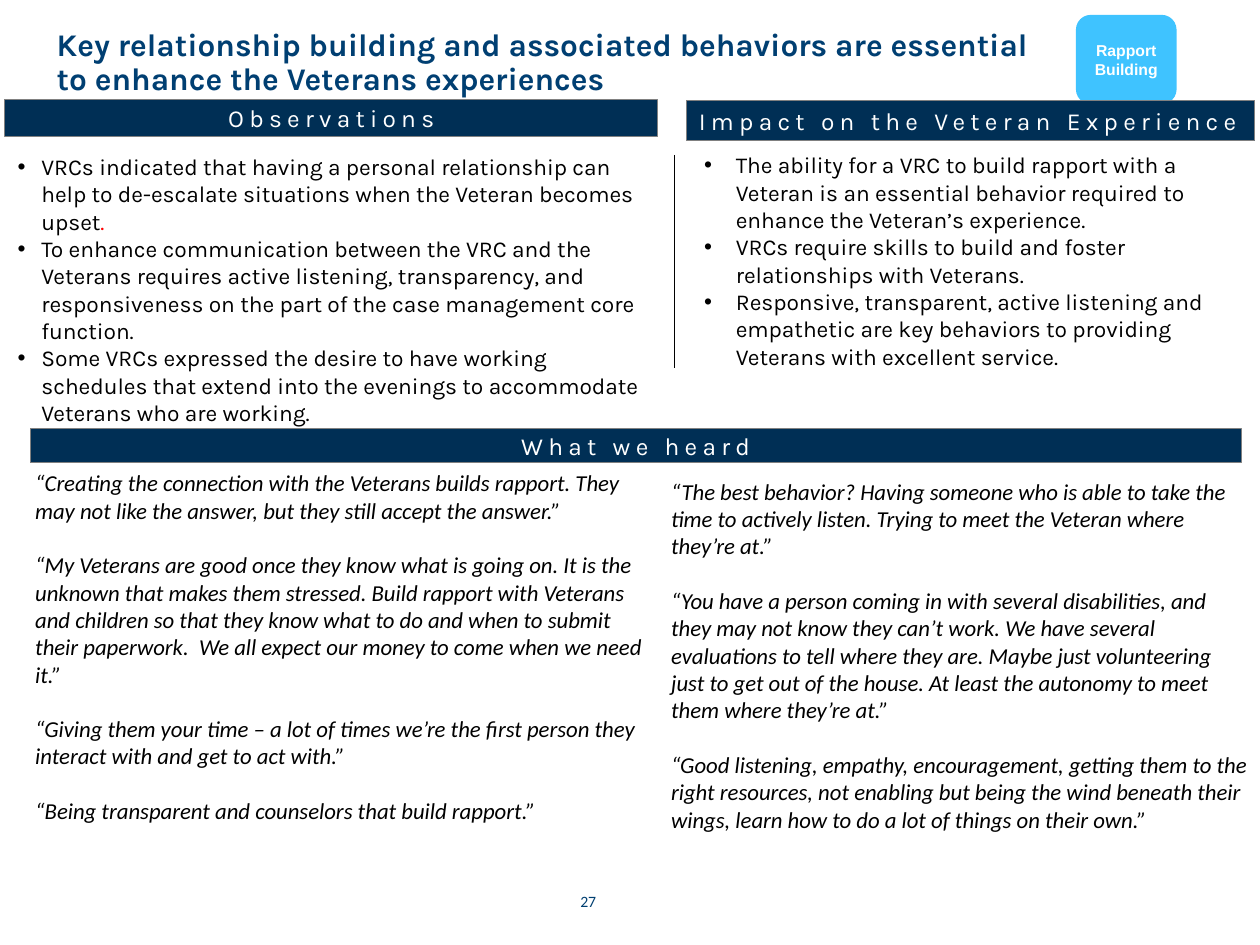
from collections import namedtuple
from dataclasses import dataclass

from lxml.etree import SubElement
from pptx import Presentation
from pptx.dml.color import RGBColor
from pptx.enum.shapes import MSO_CONNECTOR, MSO_SHAPE
from pptx.enum.text import MSO_ANCHOR as Anchor, MSO_AUTO_SIZE, PP_ALIGN as Align
from pptx.oxml.ns import qn
from pptx.util import Cm, Pt

Box = namedtuple("Box", "left top width height")


@dataclass(frozen=True)
class Theme:
    """Colours, fonts and type sizes of the slide."""
    navy: str = "002F55"
    title: str = "003F72"
    number: str = "003F71"
    sky: str = "3FC3FF"
    grey: str = "808080"
    black: str = "000000"
    white: str = "FFFFFF"
    red: str = "FF0000"
    heading_font: str = "Karla"
    quote_font: str = "Calibri"
    badge_font: str = "Arial"
    title_size: float = 18
    band_size: float = 14
    body_size: float = 13
    small_size: float = 9
    quote_gap: float = 15.6


THEME = Theme()

TITLE = ("Key relationship building and associated behaviors are essential "
         "to enhance the Veterans experiences")
OBSERVATIONS = [
    [("VRCs indicated that having a personal relationship can help to de-escalate "
      "situations when the Veteran becomes upset", THEME.black), (".", THEME.red)],
    [("To enhance communication between the VRC and the Veterans requires active "
      "listening, transparency, and responsiveness on the part of the case management "
      "core function.", THEME.black)],
    [("Some VRCs expressed the desire to have working schedules that extend into the "
      "evenings to accommodate Veterans who are working.", THEME.black)],
]
IMPACTS = [
    [("The ability for a VRC to build rapport with a Veteran is an essential behavior "
      "required to enhance the Veteran’s experience.", THEME.black)],
    [("VRCs require skills to build and foster relationships with Veterans.", THEME.black)],
    [("Responsive, transparent, active listening and empathetic are key behaviors to "
      "providing Veterans with excellent service.", THEME.black)],
]
LEFT_QUOTES = [
    "“Creating the connection with the Veterans builds rapport. They may not like the "
    "answer, but they still accept the answer.”",
    "“My Veterans are good once they know what is going on. It is the unknown that makes "
    "them stressed. Build rapport with Veterans and children so that they know what to do "
    "and when to submit their paperwork.  We all expect our money to come when we need it.”",
    "“Giving them your time – a lot of times we’re the first person they interact with "
    "and get to act with.”",
    "“Being transparent and counselors that build rapport.”",
]
RIGHT_QUOTES = [
    "“The best behavior? Having someone who is able to take the time to actively listen. "
    "Trying to meet the Veteran where they’re at.”",
    "“You have a person coming in with several disabilities, and they may not know they "
    "can’t work. We have several evaluations to tell where they are. Maybe just "
    "volunteering just to get out of the house. At least the autonomy to meet them where "
    "they’re at.”",
    "“Good listening, empathy, encouragement, getting them to the right resources, not "
    "enabling but being the wind beneath their wings, learn how to do a lot of things on "
    "their own.”",
]


def write_text(paragraph, text, *, font, size, color, bold=False, italic=False,
               tracking=0, align=Align.LEFT, before=0, line=1.0):
    """Add a formatted run of text to a paragraph."""
    paragraph.alignment = align
    paragraph.space_before = Pt(before)
    paragraph.line_spacing = line
    run = paragraph.add_run()
    run.text = text
    run.font.name, run.font.size = font, Pt(size)
    run.font.bold, run.font.italic = bold, italic
    run.font.color.rgb = RGBColor.from_string(color)
    if tracking:
        run.font._element.set("spc", str(tracking * 100))


def place(shape, box):
    """Move a shape to a box given in centimetres."""
    shape.left, shape.top, shape.width, shape.height = map(Cm, box)


def paragraphs_for(frame, items):
    """Pair each item with a paragraph of the frame."""
    for index, item in enumerate(items):
        yield (frame.add_paragraph() if index else frame.paragraphs[0]), item


def add_block(slide, box, preset, fill, outline=None):
    """Add a filled preset shape and return it."""
    block = slide.shapes.add_shape(preset, *map(Cm, box))
    block.shadow.inherit = False
    block.fill.solid()
    block.fill.fore_color.rgb = RGBColor.from_string(fill)
    if outline:
        block.line.color.rgb = RGBColor.from_string(outline)
        block.line.width = Pt(0.5)
    else:
        block.line.fill.background()
    block.text_frame.word_wrap = True
    block.text_frame.vertical_anchor = Anchor.MIDDLE
    return block


def add_band(slide, box, text, align=Align.CENTER):
    """Add a navy heading band."""
    band = add_block(slide, box, MSO_SHAPE.RECTANGLE, THEME.navy, THEME.grey)
    write_text(band.text_frame.paragraphs[0], text, font=THEME.heading_font,
               size=THEME.band_size, color=THEME.white, tracking=3, align=align)


def fill_title(slide, box):
    """Fill the title placeholder."""
    title = slide.shapes.title
    place(title, box)
    frame = title.text_frame
    frame.auto_size = MSO_AUTO_SIZE.NONE
    frame.vertical_anchor = Anchor.MIDDLE
    frame.margin_top, frame.margin_bottom = 0, Cm(1.04)
    write_text(frame.paragraphs[0], TITLE, font=THEME.heading_font, size=THEME.title_size,
               color=THEME.title, bold=True, line=0.9)


def fill_list(placeholder, box, items, indent):
    """Fill a body placeholder with a bulleted list."""
    place(placeholder, box)
    placeholder.text_frame.auto_size = MSO_AUTO_SIZE.NONE
    for paragraph, parts in paragraphs_for(placeholder.text_frame, items):
        properties = paragraph._p.get_or_add_pPr()
        properties.set("marL", str(Cm(indent)))
        properties.set("indent", str(-Cm(indent)))
        SubElement(properties, qn("a:buFont"), typeface="Arial")
        SubElement(properties, qn("a:buChar"), char="•")
        for text, color in parts:
            write_text(paragraph, text, font=THEME.heading_font, size=THEME.body_size,
                       color=color)


def add_badge(slide, box):
    """Add the rounded topic badge."""
    badge = add_block(slide, box, MSO_SHAPE.ROUNDED_RECTANGLE, THEME.sky)
    frame = badge.text_frame
    frame.margin_left = frame.margin_right = frame.margin_top = frame.margin_bottom = 0
    write_text(frame.paragraphs[0], "Rapport Building", font=THEME.badge_font,
               size=THEME.small_size, color=THEME.white, bold=True, align=Align.CENTER)


def add_divider(slide, box):
    """Add the vertical line between the two lists."""
    divider = slide.shapes.add_connector(
        MSO_CONNECTOR.STRAIGHT, Cm(box.left), Cm(box.top),
        Cm(box.left + box.width), Cm(box.top + box.height))
    divider.line.color.rgb = RGBColor.from_string(THEME.black)
    divider.line.width = Pt(0.5)
    SubElement(divider._element.spPr, qn("a:effectLst"))


def add_findings(slide, box, heading, placeholder, items, *, band, inset, indent, align):
    """Place a heading band with its bulleted list below."""
    add_band(slide, Box(box.left, box.top, box.width, band), heading, align)
    offset, drop, width = inset
    fill_list(placeholder, Box(box.left + offset, box.top + drop, width, box.height - drop),
              items, indent)


def add_quotes(slide, box, quotes):
    """Add a column of italic quotations."""
    frame = slide.shapes.add_textbox(*map(Cm, box)).text_frame
    frame.word_wrap = True
    for index, (paragraph, quote) in enumerate(paragraphs_for(frame, quotes)):
        write_text(paragraph, quote, font=THEME.quote_font, size=THEME.body_size,
                   color=THEME.black, italic=True, before=THEME.quote_gap if index else 0)


def add_heard(slide, box):
    """Place the quotation band and its two columns."""
    add_band(slide, Box(box.left, box.top, box.width, 0.69), "What we heard")
    add_quotes(slide, Box(box.left - 0.15, box.top + 0.69, 12.83, 7.49), LEFT_QUOTES)
    add_quotes(slide, Box(box.left + 12.67, box.top + 0.86, 12.12, 8.03), RIGHT_QUOTES)


def add_number(slide, box):
    """Add the page number."""
    frame = slide.shapes.add_textbox(*map(Cm, box)).text_frame
    frame.word_wrap = True
    frame.vertical_anchor = Anchor.MIDDLE
    write_text(frame.paragraphs[0], "27", font=THEME.quote_font, size=THEME.small_size,
               color=THEME.number, align=Align.CENTER)


def main():
    """Build and save the presentation."""
    presentation = Presentation()
    presentation.slide_width, presentation.slide_height = Cm(25.4), Cm(19.05)
    slide = presentation.slides.add_slide(presentation.slide_layouts[3])
    fill_title(slide, Box(0.89, 0.71, 20.24, 2.16))
    add_badge(slide, Box(21.69, 0.3, 2.03, 1.8))
    add_findings(slide, Box(0.1, 2.01, 13.16, 6.2), "Observations", slide.placeholders[1],
                 OBSERVATIONS, band=0.74, inset=(0, 0.94, 13.34), indent=0.48,
                 align=Align.CENTER)
    add_divider(slide, Box(13.59, 3.12, 0, 4.3))
    add_findings(slide, Box(13.84, 2.03, 11.46, 6.63), "Impact on the Veteran Experience",
                 slide.placeholders[2], IMPACTS, band=0.81, inset=(0.1, 0.89, 11.2),
                 indent=0.64, align=Align.LEFT)
    add_heard(slide, Box(0.61, 8.64, 24.41, 8.89))
    add_number(slide, Box(11.15, 17.65, 1.42, 1.02))
    presentation.save("out.pptx")


if __name__ == "__main__":
    main()
